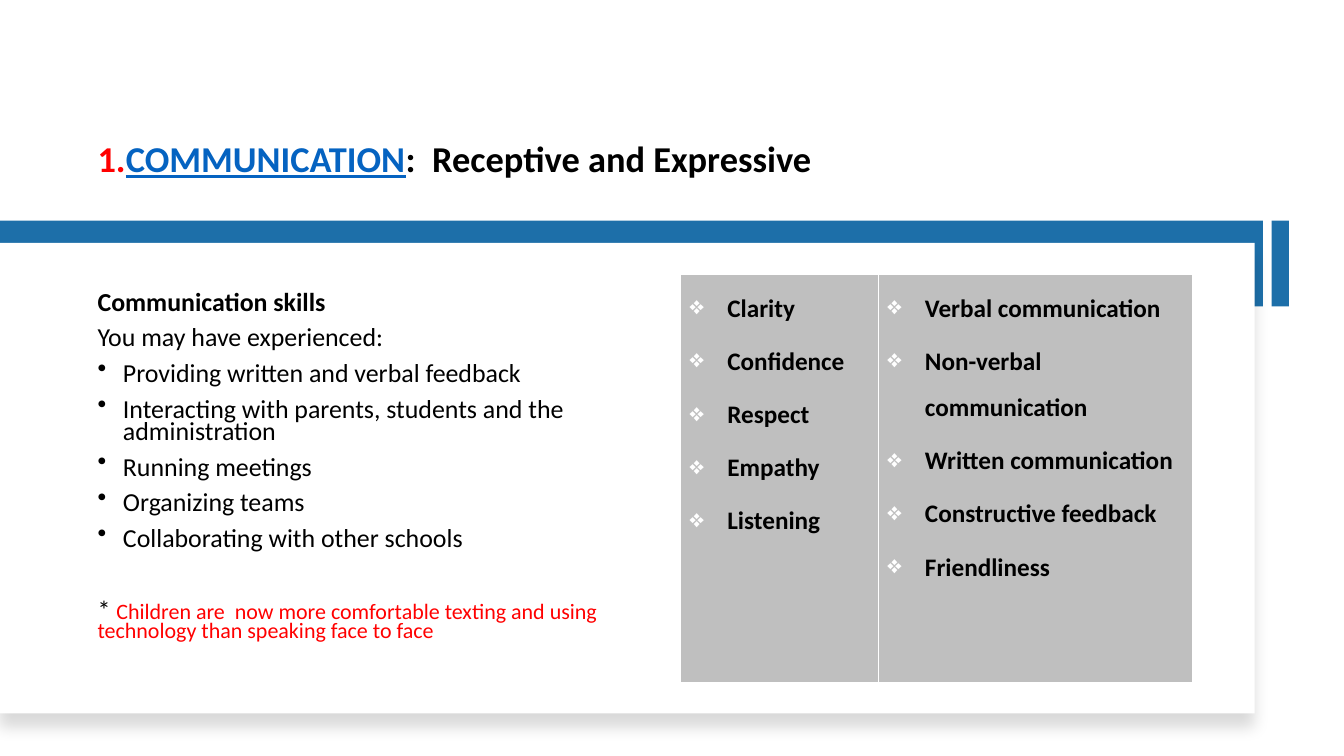
from dataclasses import dataclass

from lxml import etree
from pptx import Presentation
from pptx.dml.color import RGBColor
from pptx.enum.shapes import MSO_SHAPE
from pptx.enum.text import MSO_ANCHOR
from pptx.oxml.ns import qn
from pptx.util import Cm, Pt

RECTANGLE = MSO_SHAPE.RECTANGLE
TOP, BOTTOM = MSO_ANCHOR.TOP, MSO_ANCHOR.BOTTOM


@dataclass(frozen=True)
class Theme:
    font: str = "Calibri"
    black: str = "000000"
    white: str = "FFFFFF"
    red: str = "FF0000"
    link: str = "0563C1"
    band: str = "1D6FA9"
    cell: str = "BFBFBF"
    title_size: float = 26
    body_size: float = 18.5
    note_size: float = 15.7
    table_size: float = 18


THEME = Theme()


@dataclass(frozen=True)
class Box:
    """Position and size in centimetres."""
    left: float
    top: float
    width: float
    height: float

    def lengths(self) -> tuple:
        return Cm(self.left), Cm(self.top), Cm(self.width), Cm(self.height)


@dataclass(frozen=True)
class Panel:
    box: Box
    color: str
    shadow: bool = False


@dataclass(frozen=True)
class Run:
    text: str
    size: float = THEME.body_size
    color: str = THEME.black
    bold: bool = False
    underline: bool = False


@dataclass(frozen=True)
class Paragraph:
    runs: tuple[Run, ...]
    line_spacing: float
    space_before: float = 0
    bullet: str = ""
    bullet_color: str = THEME.black
    indent: float = 0


PANELS = (
    Panel(Box(0, 5.56, 31.83, 2.16), THEME.band),
    Panel(Box(0, 6.12, 31.62, 11.86), THEME.white, shadow=True),
    Panel(Box(32.05, 5.56, 0.43, 2.16), THEME.band),
)

TITLE = Paragraph((
    Run("1.", THEME.title_size, THEME.red, bold=True),
    Run("COMMUNICATION", THEME.title_size, THEME.link, bold=True, underline=True),
    Run(":  Receptive and Expressive", THEME.title_size, bold=True),
), line_spacing=0.9)

EXPERIENCES = (
    "Providing written and verbal feedback",
    "Interacting with parents, students and the administration",
    "Running meetings",
    "Organizing teams",
    "Collaborating with other schools",
)
NOTE = "Children are  now more comfortable texting and using technology than speaking face to face"

BODY = (
    Paragraph((Run("Communication skills", bold=True),), 0.7),
    Paragraph((Run("You may have experienced:"),), 0.7, 10),
    *(Paragraph((Run(item),), 0.7, 10, "•", indent=0.64) for item in EXPERIENCES),
    Paragraph((Run("* "), Run(NOTE, THEME.note_size, THEME.red)), 0.7, 35.8),
)

SKILL_COLUMNS = (
    (4.98, ("Clarity", "Confidence", "Respect", "Empathy", "Listening")),
    (7.92, ("Verbal communication", "Non-verbal communication", "Written communication",
            "Constructive feedback", "Friendliness")),
)
BORDERS = {"a:lnL": 1, "a:lnR": 1, "a:lnT": 1, "a:lnB": 3}


def apply(target, values: dict) -> None:
    for name, value in values.items():
        setattr(target, name, value)


def add_color(parent, color: str):
    return etree.SubElement(parent, qn("a:srgbClr"), val=color)


def write_paragraphs(frame, paragraphs: tuple[Paragraph, ...]) -> None:
    for index, content in enumerate(paragraphs):
        paragraph = frame.add_paragraph() if index else frame.paragraphs[0]
        apply(paragraph, {"line_spacing": content.line_spacing,
                          "space_before": Pt(content.space_before)})
        if content.bullet:
            properties = paragraph._p.get_or_add_pPr()
            properties.set("marL", str(Cm(content.indent)))
            properties.set("indent", str(-Cm(content.indent)))
            add_color(etree.SubElement(properties, qn("a:buClr")), content.bullet_color)
            etree.SubElement(properties, qn("a:buChar"), char=content.bullet)
        for part in content.runs:
            run = paragraph.add_run()
            run.text = part.text
            apply(run.font, {"name": THEME.font, "size": Pt(part.size),
                             "bold": part.bold, "underline": part.underline})
            run.font.color.rgb = RGBColor.from_string(part.color)


def draw_panel(slide, panel: Panel) -> None:
    shape = slide.shapes.add_shape(RECTANGLE, *panel.box.lengths())
    shape.fill.solid()
    shape.fill.fore_color.rgb = RGBColor.from_string(panel.color)
    shape.line.fill.background()
    shape.shadow.inherit = False
    if panel.shadow:
        effects = shape._element.spPr.find(qn("a:effectLst"))
        shadow = etree.SubElement(effects, qn("a:outerShdw"), blurRad=str(Pt(11)),
                                  dist=str(Pt(10)), dir="5400000", rotWithShape="0")
        etree.SubElement(add_color(shadow, THEME.black), qn("a:alpha"), val="15000")


def draw_text(slide, box: Box, paragraphs: tuple[Paragraph, ...], anchor, inset: float) -> None:
    frame = slide.shapes.add_textbox(*box.lengths()).text_frame
    apply(frame, {"word_wrap": True, "vertical_anchor": anchor, "margin_top": Cm(inset)})
    write_paragraphs(frame, paragraphs)


def draw_borders(cell) -> None:
    properties = cell._tc.get_or_add_tcPr()
    for position, (side, width) in enumerate(BORDERS.items()):
        line = etree.Element(qn(side), w=str(Pt(width)))
        add_color(etree.SubElement(line, qn("a:solidFill")), THEME.white)
        properties.insert(position, line)


def draw_skills(slide, box: Box) -> None:
    table = slide.shapes.add_table(1, len(SKILL_COLUMNS), *box.lengths()).table
    apply(table, {"first_row": False, "horz_banding": False})
    for index, (width, skills) in enumerate(SKILL_COLUMNS):
        table.columns[index].width = Cm(width)
        cell = table.cell(0, index)
        apply(cell, {"margin_left": Cm(0.23), "margin_right": Cm(0.23),
                     "margin_top": Cm(0.1), "margin_bottom": Cm(0.1),
                     "vertical_anchor": TOP})
        cell.fill.solid()
        cell.fill.fore_color.rgb = RGBColor.from_string(THEME.cell)
        draw_borders(cell)
        write_paragraphs(cell.text_frame, tuple(
            Paragraph((Run(skill, THEME.table_size, bold=True),), 1.5, 5,
                      "❖", THEME.white, 0.95)
            for skill in skills))


def main() -> None:
    presentation = Presentation()
    apply(presentation, {"slide_width": Cm(33.87), "slide_height": Cm(19.05)})
    slide = presentation.slides.add_slide(presentation.slide_layouts[6])
    for panel in PANELS:
        draw_panel(slide, panel)
    draw_text(slide, Box(2.21, 1.07, 27.97, 3.61), (TITLE,), BOTTOM, 0.13)
    draw_text(slide, Box(2.21, 7.21, 13.79, 10.11), BODY, TOP, 0.19)
    draw_skills(slide, Box(17.15, 6.91, 12.9, 10.31))
    presentation.save("out.pptx")


if __name__ == "__main__":
    main()
